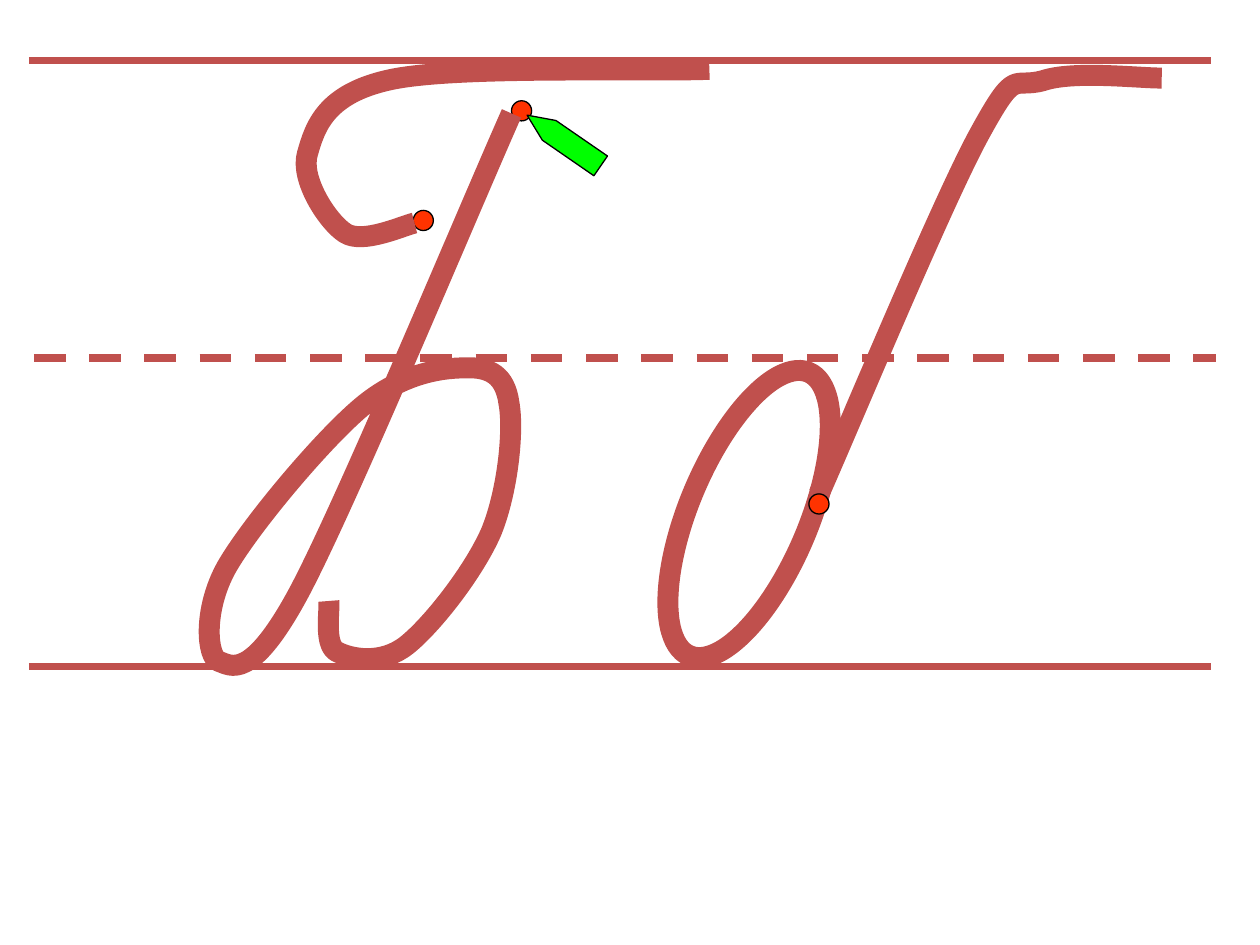
"""Builds a handwriting slide with the letter Б in capital and small form."""
from lxml.etree import SubElement
from pptx import Presentation
from pptx.dml.color import RGBColor
from pptx.enum.dml import MSO_LINE
from pptx.enum.shapes import MSO_CONNECTOR, MSO_SHAPE
from pptx.oxml.ns import qn
from pptx.util import Inches, Pt

INK = "C0504D"


def paint(shape, line, width, fill=None):
    shape.shadow.inherit = False
    shape.line.color.rgb = RGBColor.from_string(line)
    shape.line.width = Pt(width)
    if fill:
        shape.fill.solid()
        shape.fill.fore_color.rgb = RGBColor.from_string(fill)
    else:
        shape.fill.background()


def add_stroke(group, points):
    start, *rest = [(Inches(x), Inches(y)) for x, y in points]
    builder = group.shapes.build_freeform(*start)
    builder.add_line_segments(rest, close=False)
    stroke = builder.convert_to_shape()
    outline = next(stroke.element.iter(qn("a:path")))
    segments = outline.findall(qn("a:lnTo"))
    for first in range(0, len(segments), 3):
        curve = SubElement(outline, qn("a:cubicBezTo"))
        for segment in segments[first:first + 3]:
            curve.append(segment[0])
            outline.remove(segment)
    paint(stroke, INK, 12)


deck = Presentation()
deck.slide_width, deck.slide_height = Inches(10), Inches(7.5)
page = deck.slides.add_slide(deck.slide_layouts[6])
small_letter, capital_letter, ruling = [page.shapes.add_group_shape() for _ in range(3)]

oval = small_letter.shapes.add_shape(
    MSO_SHAPE.OVAL, Inches(5.47), Inches(2.86), Inches(0.95), Inches(2.44))
oval.rotation = 22.8
paint(oval, INK, 12)
add_stroke(small_letter, [
    (6.5, 3.92), (6.71, 3.45), (7.47, 1.62), (7.77, 1.07),
    (8.07, 0.52), (8.03, 0.71), (8.28, 0.64),
    (8.52, 0.56), (9.03, 0.62), (9.22, 0.62)])

for group, left, top in [(small_letter, 6.42, 3.92),
                         (capital_letter, 4.06, 0.8),
                         (capital_letter, 3.28, 1.67)]:
    dot = group.shapes.add_shape(
        MSO_SHAPE.FLOWCHART_CONNECTOR, Inches(left), Inches(top), Inches(0.16), Inches(0.16))
    paint(dot, "000000", 0.75, "FF3300")

add_stroke(capital_letter, [
    (2.61, 4.77), (2.62, 4.84), (2.57, 5.11), (2.67, 5.17),
    (2.78, 5.23), (3.03, 5.28), (3.23, 5.12),
    (3.43, 4.96), (3.76, 4.54), (3.9, 4.22),
    (4.03, 3.9), (4.08, 3.42), (4.04, 3.2),
    (4.01, 2.98), (3.89, 2.91), (3.69, 2.92),
    (3.49, 2.92), (3.18, 2.97), (2.87, 3.23),
    (2.55, 3.5), (1.99, 4.17), (1.8, 4.5),
    (1.61, 4.84), (1.64, 5.22), (1.74, 5.25),
    (1.83, 5.28), (1.99, 5.42), (2.38, 4.69),
    (2.76, 3.97), (3.71, 1.69), (4.06, 0.9)])
add_stroke(capital_letter, [
    (3.29, 1.77), (3.2, 1.79), (2.88, 1.94), (2.74, 1.85),
    (2.6, 1.76), (2.38, 1.42), (2.44, 1.22),
    (2.5, 1.01), (2.58, 0.74), (3.11, 0.63),
    (3.64, 0.52), (5.1, 0.57), (5.63, 0.55)])

for left, height, dash in [(0.23, 0.48, None), (0.27, 2.84, MSO_LINE.DASH), (0.23, 5.29, None)]:
    rule = ruling.shapes.add_connector(
        MSO_CONNECTOR.STRAIGHT, Inches(left), Inches(height), Inches(left + 9.38), Inches(height))
    rule.line.color.rgb = RGBColor.from_string(INK)
    rule.line.width = Pt(4.5)
    rule.line.dash_style = dash
    SubElement(rule.element.spPr, qn("a:effectLst"))

pen = page.shapes.add_shape(
    MSO_SHAPE.PENTAGON, Inches(4.12), Inches(1.02), Inches(0.71), Inches(0.19))
pen.rotation = 214.6
pen.adjustments[0] = 1.12
paint(pen, "000000", 0.75, "00FF00")

deck.save("out.pptx")
